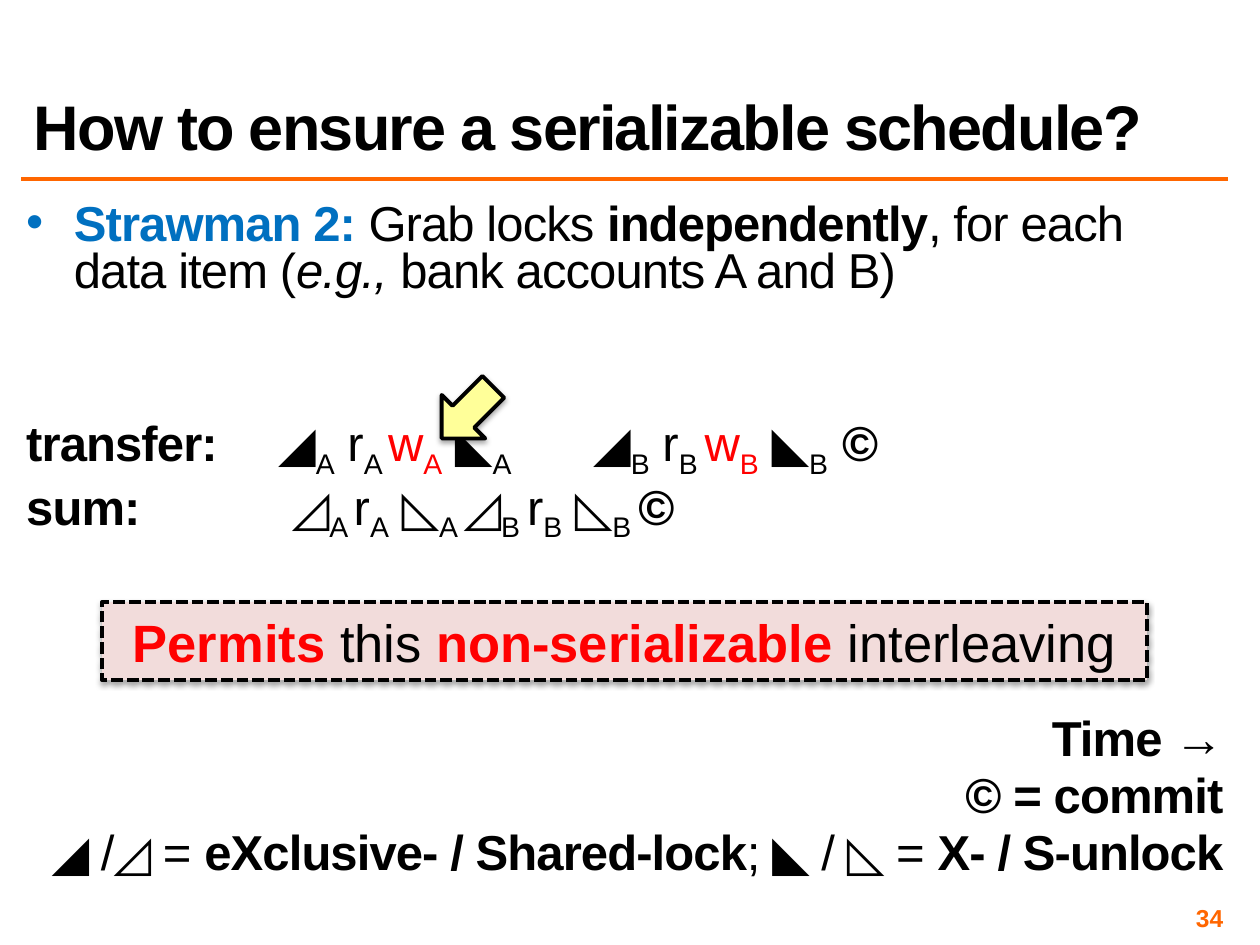
from lxml import etree
from pptx import Presentation
from pptx.dml.color import RGBColor
from pptx.enum.dml import MSO_LINE
from pptx.enum.shapes import MSO_CONNECTOR, MSO_SHAPE
from pptx.enum.text import MSO_ANCHOR, PP_ALIGN
from pptx.oxml.ns import qn
from pptx.util import Cm, Pt

COLORS = {
    "text": "000000",
    "accent": "FF6600",
    "term": "0070C0",
    "alert": "FF0000",
    "callout": "F2DCDB",
    "arrow": "FFFF99",
}
FONT = "Arial"
STRAIGHT = MSO_CONNECTOR.STRAIGHT
RECTANGLE, LEFT_ARROW = MSO_SHAPE.RECTANGLE, MSO_SHAPE.LEFT_ARROW
DASH = MSO_LINE.SQUARE_DOT
TOP, MIDDLE, BOTTOM = MSO_ANCHOR.TOP, MSO_ANCHOR.MIDDLE, MSO_ANCHOR.BOTTOM
LEFT, CENTER, RIGHT = PP_ALIGN.LEFT, PP_ALIGN.CENTER, PP_ALIGN.RIGHT


def rgb(name):
    return RGBColor.from_string(COLORS[name])


def add_run(paragraph, text, size=28, color="text", bold=False, italic=False,
            spacing=-0.5, subscript=False):
    run = paragraph.add_run()
    run.text = text
    font = run.font
    font.name, font.size, font.bold, font.italic = FONT, Pt(size), bold, italic
    font.color.rgb = rgb(color)
    properties = run._r.get_or_add_rPr()
    if spacing:
        properties.set("spc", str(int(spacing * 100)))
    if subscript:
        properties.set("baseline", "-25000")


def add_text_box(slide, box, anchor=TOP, inset=0.1):
    frame = slide.shapes.add_textbox(*map(Cm, box)).text_frame
    frame.word_wrap = True
    frame.vertical_anchor = anchor
    frame.margin_left = frame.margin_right = Cm(inset)
    frame.margin_top = frame.margin_bottom = Cm(0.1)
    return frame


def add_paragraphs(frame, lines, align=LEFT):
    for index, line in enumerate(lines):
        paragraph = frame.add_paragraph() if index else frame.paragraphs[0]
        paragraph.alignment = align
        paragraph.line_spacing = 0.8
        paragraph.space_before = Pt(5.6)
        for text, style in line:
            add_run(paragraph, text, **style)


def add_shadow(shape):
    shape.shadow.inherit = False
    effects = shape._element.spPr.find(qn("a:effectLst"))
    shadow = etree.SubElement(effects, qn("a:outerShdw"), blurRad=str(Pt(3.1)),
                              dist=str(Pt(1.8)), dir="5400000", rotWithShape="0")
    color = etree.SubElement(shadow, qn("a:srgbClr"), val=COLORS["text"])
    etree.SubElement(color, qn("a:alpha"), val="35000")


def add_outlined_shape(slide, kind, box, fill):
    shape = slide.shapes.add_shape(kind, *map(Cm, box))
    shape.fill.solid()
    shape.fill.fore_color.rgb = rgb(fill)
    shape.line.color.rgb = rgb("text")
    shape.line.width = Pt(2.25)
    add_shadow(shape)
    return shape


def add_title(slide, box):
    left, top, width, height = box
    frame = add_text_box(slide, box, BOTTOM, inset=0.25)
    frame.margin_bottom = Cm(0.13)
    paragraph = frame.paragraphs[0]
    paragraph.line_spacing = 0.8
    add_run(paragraph, "How to ensure a serializable schedule?", 36, bold=True, spacing=-1)
    rule_y = Cm(top + height + 0.21)
    rule = slide.shapes.add_connector(STRAIGHT, Cm(left), rule_y, Cm(left + width), rule_y)
    rule.line.color.rgb = rgb("accent")
    rule.line.width = Pt(2)
    etree.SubElement(rule._element.spPr, qn("a:effectLst"))


def add_strawman(slide, box):
    frame = add_text_box(slide, box)
    add_paragraphs(frame, [[
        ("Strawman 2: ", {"color": "term", "bold": True}),
        ("Grab locks ", {}),
        ("independently", {"bold": True}),
        (", for each data item (", {}),
        ("e.g., ", {"italic": True}),
        ("bank accounts A and B)", {}),
    ]])
    properties = frame.paragraphs[0]._p.get_or_add_pPr()
    properties.set("marL", str(Cm(0.96)))
    properties.set("indent", str(-Cm(0.96)))
    color = etree.SubElement(properties, qn("a:buClr"))
    etree.SubElement(color, qn("a:srgbClr"), val=COLORS["term"])
    etree.SubElement(properties, qn("a:buFont"), typeface=FONT)
    etree.SubElement(properties, qn("a:buChar"), char="•")


def transfer_steps(item, end):
    low = {"subscript": True}
    return [("◢", {}), (item, low), (" r", {}), (item + " ", low),
            ("w", {"color": "alert"}), (item, {"color": "alert", "subscript": True}),
            (" ◣", {}), (item + end, low)]


def sum_steps(item):
    low = {"subscript": True}
    return [("◿", {}), (item + " ", low), ("r", {}), (item, low),
            (" ◺", {}), (item + " ", low)]


def add_schedule(slide, box):
    bold = {"bold": True}
    commit = ("©", bold)
    transfer = [("transfer: \t", bold), *transfer_steps("A", " \t"), ("\t", {}),
                *transfer_steps("B", "  "), commit]
    total = [("sum: \t\t ", bold), *sum_steps("A"), *sum_steps("B"), commit]
    add_paragraphs(add_text_box(slide, box), [transfer, total])


def add_legend(slide, box):
    bold = {"bold": True}
    add_paragraphs(add_text_box(slide, box), [
        [("Time →", bold)],
        [("© = commit", bold)],
        [("◢ /◿ = ", {}), ("eXclusive- / Shared-lock", bold),
         ("; ◣ / ◺ = ", {}), ("X- / S-unlock", bold)],
    ], RIGHT)


def add_callout(slide, box):
    shape = add_outlined_shape(slide, RECTANGLE, box, "callout")
    shape.line.dash_style = DASH
    frame = shape.text_frame
    frame.vertical_anchor = MIDDLE
    paragraph = frame.paragraphs[0]
    paragraph.alignment = CENTER
    for text, alert in (("Permits ", True), ("this ", False),
                        ("non-serializable ", True), ("interleaving", False)):
        add_run(paragraph, text, 30, "alert" if alert else "text", alert, spacing=0)


def add_pointer(slide, box):
    add_outlined_shape(slide, LEFT_ARROW, box, "arrow").rotation = 315


def add_page_number(slide, box):
    paragraph = add_text_box(slide, box, MIDDLE).paragraphs[0]
    paragraph.alignment = RIGHT
    add_run(paragraph, "34", 14, "accent", True, spacing=0)


def main():
    presentation = Presentation()
    presentation.slide_width, presentation.slide_height = Cm(25.4), Cm(19.05)
    slide = presentation.slides.add_slide(presentation.slide_layouts[6])
    left, width = 0.43, 24.33
    add_title(slide, (left, 0.43, width, 2.97))
    add_strawman(slide, (left, 4.01, width, 2.2))
    add_schedule(slide, (left, 8.35, width, 2.8))
    add_legend(slide, (left, 14.4, width, 3.5))
    add_page_number(slide, (18.85, 18.21, 5.91, 0.58))
    add_callout(slide, (2.06, 12.14, 21.06, 1.57))
    add_pointer(slide, (8.69, 7.7, 1.47, 1.24))
    presentation.save("out.pptx")


if __name__ == "__main__":
    main()
